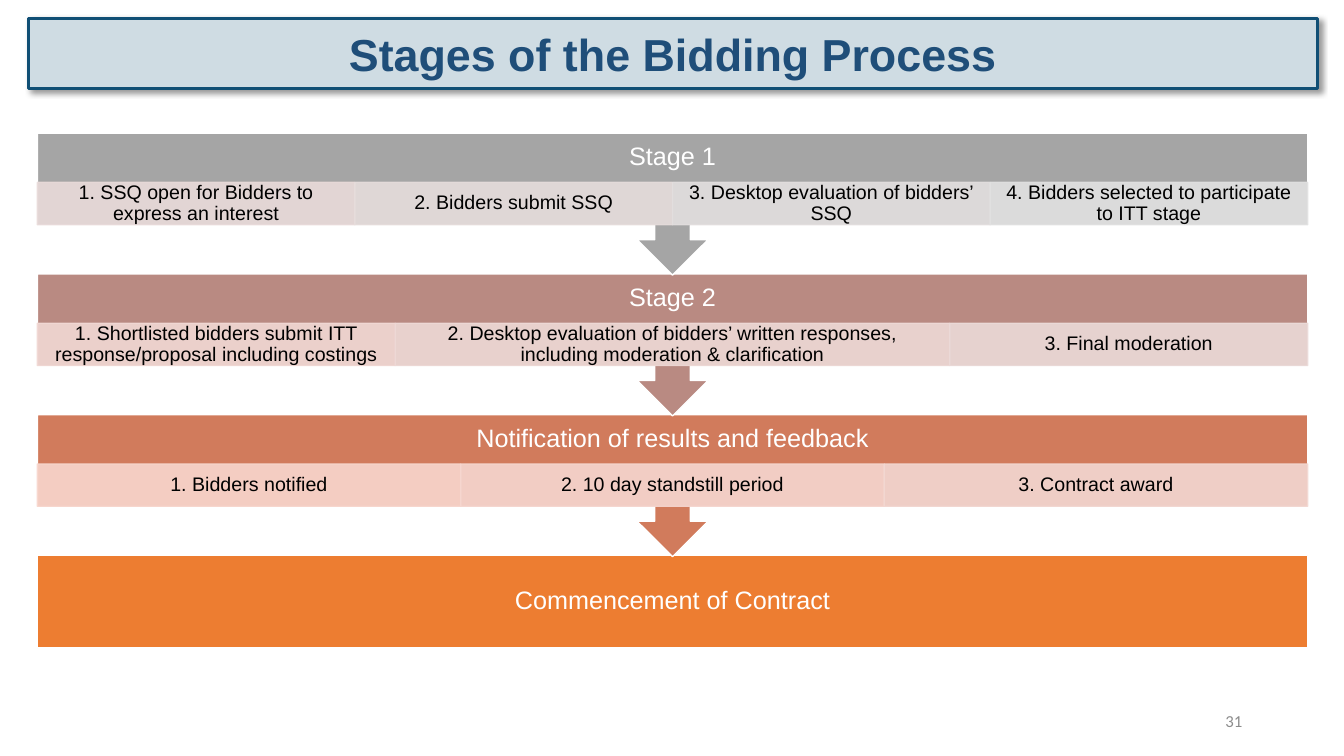
from lxml import etree
from pptx import Presentation
from pptx import util as u
from pptx.dml.color import RGBColor
from pptx.enum import shapes, text
from pptx.oxml import ns

COLOURS = {
    "white": "FFFFFF", "black": "000000", "number": "8C8C8C",
    "title_fill": "CFDCE3", "title_line": "104F75", "title_text": "1F4E79",
    "contract": "ED7D31",
}

# Each stage: heading, colour, steps as (wording, colour, relative width)
STAGES = [
    ("Stage 1", "A5A5A5", [
        ("1. SSQ open for Bidders to express an interest", "E9DBDA", 1),
        ("2. Bidders submit SSQ", "E6DDDC", 1),
        ("3. Desktop evaluation of bidders’ SSQ", "E3DFDF", 1),
        ("4. Bidders selected to participate to ITT stage", "E1E1E1", 1),
    ]),
    ("Stage 2", "B98A82", [
        ("1. Shortlisted bidders submit ITT response/proposal including costings",
         "F1D8D4", 3.55),
        ("2. Desktop evaluation of bidders’ written responses, "
         "including moderation & clarification", "EED9D6", 5.5),
        ("3. Final moderation", "EBDAD8", 3.55),
    ]),
    ("Notification of results and feedback", "D17B5C", [
        ("1. Bidders notified", "F8D7CE", 1),
        ("2. 10 day standstill period", "F6D7D0", 1),
        ("3. Contract award", "F3D8D2", 1),
    ]),
]
LEFT, WIDTH = 0.37, 12.6
FIRST_TOP, LAST_TOP = 1.32, 5.51
STAGE_HEIGHT, HEADING_HEIGHT, STEP_HEIGHT, LAST_HEIGHT = 1.41, 0.49, 0.42, 0.92


def write(box, wording, size, colour, font="Arial", bold=False,
          align=text.PP_ALIGN.CENTER, spacing=0.9, insets=(0.14, 0.14)):
    """Put one formatted paragraph in a box; insets are (sides, top and bottom)."""
    frame = box.text_frame
    frame.word_wrap = True
    frame.vertical_anchor = text.MSO_ANCHOR.MIDDLE
    frame.margin_left = frame.margin_right = u.Inches(insets[0])
    frame.margin_top = frame.margin_bottom = u.Inches(insets[1])
    para = frame.paragraphs[0]
    para.alignment = align
    para.line_spacing = spacing
    span = para.add_run()
    span.text = wording
    span.font.name, span.font.size, span.font.bold = font, u.Pt(size), bold
    span.font.color.rgb = RGBColor.from_string(colour)


def add_block(page, preset, area, fill, line, line_width=1):
    block = page.shapes.add_shape(preset, *map(u.Inches, area))
    block.shadow.inherit = False
    block.fill.solid()
    block.fill.fore_color.rgb = RGBColor.from_string(fill)
    block.line.color.rgb = RGBColor.from_string(line)
    block.line.width = u.Pt(line_width)
    return block


def add_textbox(page, area):
    return page.shapes.add_textbox(*map(u.Inches, area))


def set_opacity(block, percent):
    """Apply the opacity to both fill and outline."""
    for colour in block._element.spPr.iter(ns.qn("a:srgbClr")):
        etree.SubElement(colour, ns.qn("a:alpha"), val=str(percent * 1000))


def add_title(page, area):
    banner = add_block(page, shapes.MSO_SHAPE.RECTANGLE, area,
                       COLOURS["title_fill"], COLOURS["title_line"], 2.25)
    effects = banner._element.spPr.find(ns.qn("a:effectLst"))
    shadow = etree.SubElement(
        effects, ns.qn("a:outerShdw"), blurRad=str(u.Pt(4)), dist=str(u.Pt(3)),
        dir=str(45 * 60000), algn="tl", rotWithShape="0")
    tint = etree.SubElement(shadow, ns.qn("a:srgbClr"), val=COLOURS["black"])
    etree.SubElement(tint, ns.qn("a:alpha"), val="40000")
    write(banner, "Stages of the Bidding Process", 32, COLOURS["title_text"],
          bold=True, spacing=1, insets=(0.1, 0.05))


def add_stage(page, area, heading, colour, steps):
    left, top, width, height = area
    # Band with the arrow to the next stage
    callout = add_block(page, shapes.MSO_SHAPE.UP_ARROW_CALLOUT, area,
                        colour, COLOURS["white"])
    callout.rotation = 180
    write(add_textbox(page, (left, top, width, HEADING_HEIGHT)),
          heading, 18, COLOURS["white"])
    # Row of steps
    total = sum(share for _, _, share in steps)
    for wording, tint, share in steps:
        step_width = width * share / total
        step = add_block(page, shapes.MSO_SHAPE.RECTANGLE,
                         (left, top + HEADING_HEIGHT, step_width, STEP_HEIGHT),
                         tint, tint)
        set_opacity(step, 90)
        write(step, wording, 14, COLOURS["black"], insets=(0.11, 0.02))
        left += step_width


def add_process(page):
    # Lowest part first, so that each arrow tip lies over the next band
    contract = add_block(page, shapes.MSO_SHAPE.RECTANGLE,
                         (LEFT, LAST_TOP, WIDTH, LAST_HEIGHT),
                         COLOURS["contract"], COLOURS["white"])
    write(contract, "Commencement of Contract", 18, COLOURS["white"])
    pitch = (LAST_TOP - FIRST_TOP) / len(STAGES)
    for index, stage in reversed(list(enumerate(STAGES))):
        add_stage(page, (LEFT, FIRST_TOP + index * pitch, WIDTH, STAGE_HEIGHT), *stage)


def add_page_number(page, area):
    write(add_textbox(page, area), "31", 12, COLOURS["number"], font="Calibri",
          align=text.PP_ALIGN.RIGHT, spacing=1, insets=(0.1, 0.05))


def main():
    deck = Presentation()
    deck.slide_width, deck.slide_height = u.Inches(13.33), u.Inches(7.5)
    page = deck.slides.add_slide(deck.slide_layouts[6])
    add_page_number(page, (9.42, 6.95, 3, 0.4))
    add_process(page)
    add_title(page, (0.28, 0.18, 12.79, 0.7))
    deck.save("out.pptx")


if __name__ == "__main__":
    main()
